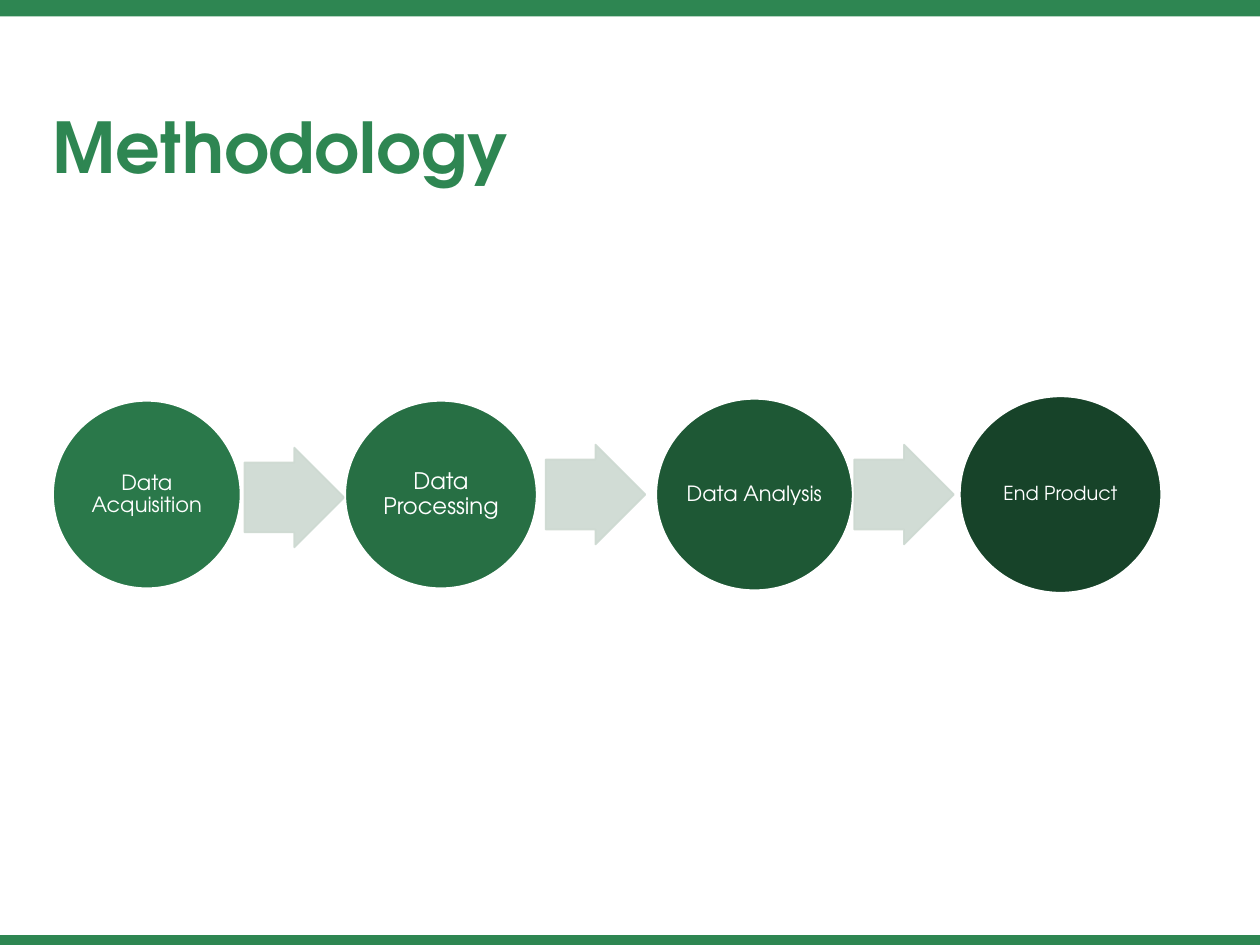
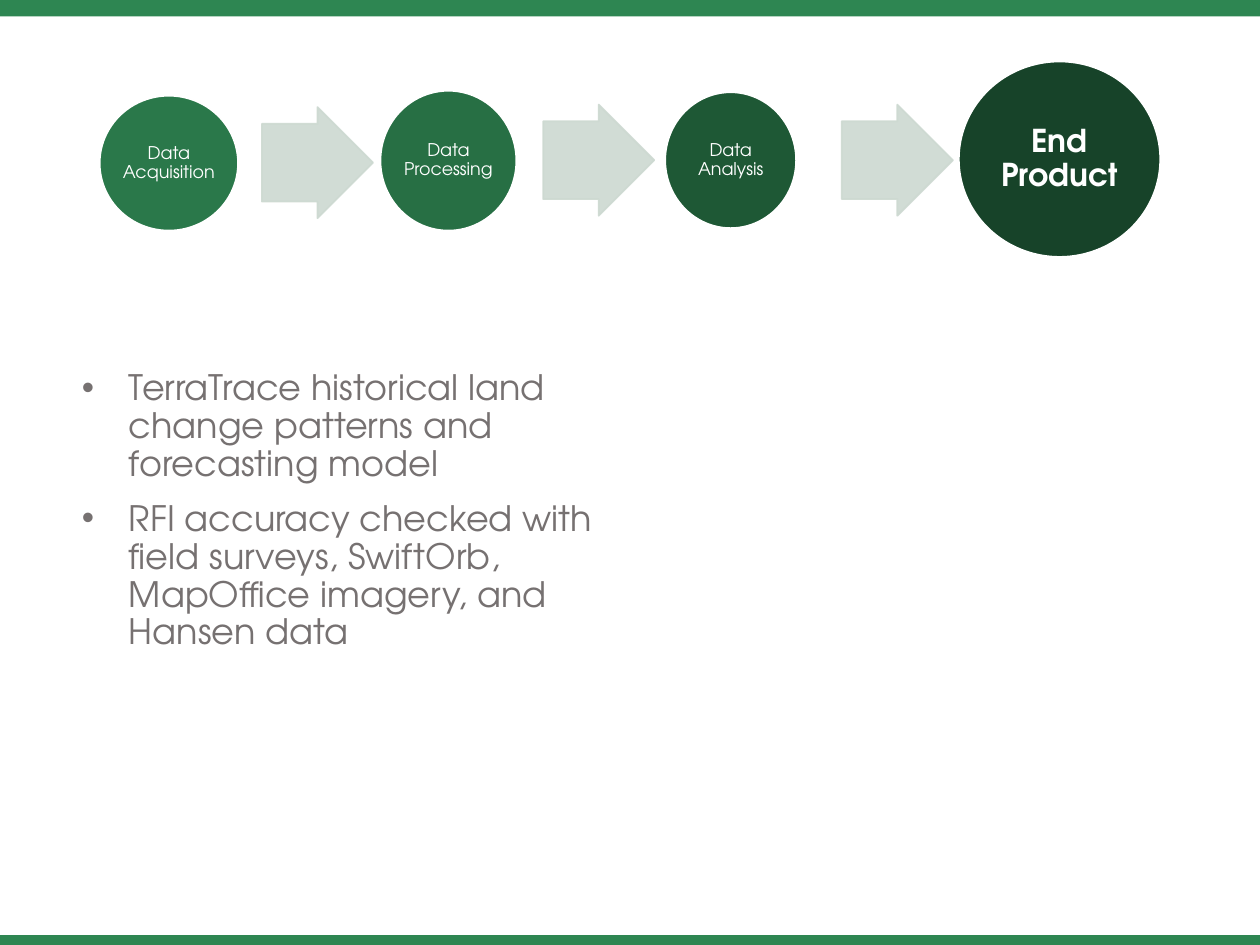
"""Build the two methodology slides, each with its chain of steps."""
from lxml.etree import SubElement as Sub
from pptx import Presentation as Deck
from pptx.dml.color import RGBColor as Rgb
from pptx.enum.shapes import MSO_SHAPE as Kind
from pptx.enum.text import MSO_ANCHOR as Anchor, PP_ALIGN as Align
from pptx.oxml.ns import qn
from pptx.util import Cm, Pt

WIDE, HIGH = 25.4, 19.05
FONT = "TeX Gyre Adventor"
GREEN, PALE, GREY, WHITE = "2E8652", "CDD9D1", "767171", "FFFFFF"
STEPS = [
    ("Data Acquisition", "2A784A"),
    ("Data Processing", "276F44"),
    ("Data Analysis", "1E5835"),
    ("End Product", "174329"),
]


def tint(code):
    return Rgb.from_string(code)


class Page:
    def __init__(self):
        self.deck = Deck()
        self.deck.slide_width, self.deck.slide_height = Cm(WIDE), Cm(HIGH)
        self.slide = None

    def start(self, layout):
        self.slide = self.deck.slides.add_slide(self.deck.slide_layouts.get_by_name(layout))

    def shape(self, kind, box, fill, line=None):
        item = self.slide.shapes.add_shape(kind, *map(Cm, box))
        item.shadow.inherit = False
        item.fill.solid()
        item.fill.fore_color.rgb = tint(fill)
        if line:
            item.line.color.rgb = tint(line)
            item.line.width = Pt(1)
        else:
            item.line.fill.background()
        return item

    def bands(self):
        tree = self.deck.slide_master.element.cSld.spTree
        for top, tall in ((0, 0.33), (HIGH - 0.2, 0.2)):
            band = self.shape(Kind.RECTANGLE, (0, top, WIDE, tall), GREEN)
            tree.append(band.element)

    def style(self, frame, size, color, align=Align.LEFT, bold=False):
        frame.word_wrap = True
        for para in frame.paragraphs:
            para.alignment = align
            para.line_spacing = 0.9
            for run in para.runs:
                font = run.font
                font.name, font.size, font.bold = FONT, Pt(size), bold
                font.color.rgb = tint(color)

    def title(self, text, box):
        item = self.slide.shapes.title
        item.left, item.top, item.width, item.height = map(Cm, box)
        frame = item.text_frame
        frame.text = text
        frame.vertical_anchor = Anchor.TOP
        frame.margin_top = Cm(0.52)
        self.style(frame, 40, GREEN, bold=True)

    def arrow(self, left, mid, size):
        item = self.shape(Kind.RIGHT_ARROW, (left, mid - size / 2, size, size), PALE, PALE)
        item.adjustments[0], item.adjustments[1] = 0.7, 0.5
        for node in item.element.spPr.iter(qn("a:srgbClr")):
            Sub(node, qn("a:alpha"), val="90000")

    def step(self, name, fill, left, mid, wide, tall, size, bold=False):
        item = self.shape(Kind.OVAL, (left, mid - tall / 2, wide, tall), fill, WHITE)
        frame = item.text_frame
        frame.text = name
        frame.vertical_anchor = Anchor.MIDDLE
        frame.margin_left = frame.margin_right = Cm(0)
        frame.margin_top = frame.margin_bottom = Cm(0)
        self.style(frame, size, WHITE, Align.CENTER, bold)

    def chain(self, spots, heads, size):
        for left, mid in heads:
            self.arrow(left, mid, size)
        for (name, fill), spot in zip(STEPS, spots):
            self.step(name, fill, *spot)

    def list(self, lines, box):
        frame = self.slide.shapes.add_textbox(*map(Cm, box)).text_frame
        frame.text = "\n".join(lines)
        self.style(frame, 20, GREY)
        for para in frame.paragraphs:
            para.space_before = Pt(10)
            props = para._p.get_or_add_pPr()
            props.set("marL", str(Cm(0.95)))
            props.set("indent", str(-Cm(0.95)))
            Sub(props, qn("a:buFont"), typeface="Arial")
            Sub(props, qn("a:buChar"), char="•")


def main():
    page = Page()
    page.start("Title Only")
    page.bands()
    page.title("Methodology", (0.81, 1.75, 9.91, 3.68))
    page.chain(
        [
            (1.07, 9.97, 3.78, 3.78, 12),
            (6.96, 9.97, 3.86, 3.78, 13),
            (13.23, 9.97, 3.96, 3.86, 12),
            (19.35, 9.97, 4.06, 3.96, 11),
        ],
        [(4.93, 10.03), (11, 9.97), (17.22, 9.97)],
        2.01,
    )

    page.start("Blank")
    page.list(
        [
            "TerraTrace historical land change patterns and forecasting model",
            "RFI accuracy checked with field surveys, SwiftOrb, "
            "MapOffice imagery, and Hansen data",
        ],
        (1.4, 7.34, 11.51, 9.37),
    )
    page.chain(
        [
            (2.01, 3.29, 2.79, 2.72, 10),
            (7.67, 3.24, 2.74, 2.82, 10),
            (13.41, 3.23, 2.64, 2.74, 10),
            (19.33, 3.21, 4.06, 3.94, 18, True),
        ],
        [(5.28, 3.28), (10.95, 3.23), (16.97, 3.23)],
        2.24,
    )
    page.deck.save("out.pptx")


if __name__ == "__main__":
    main()
